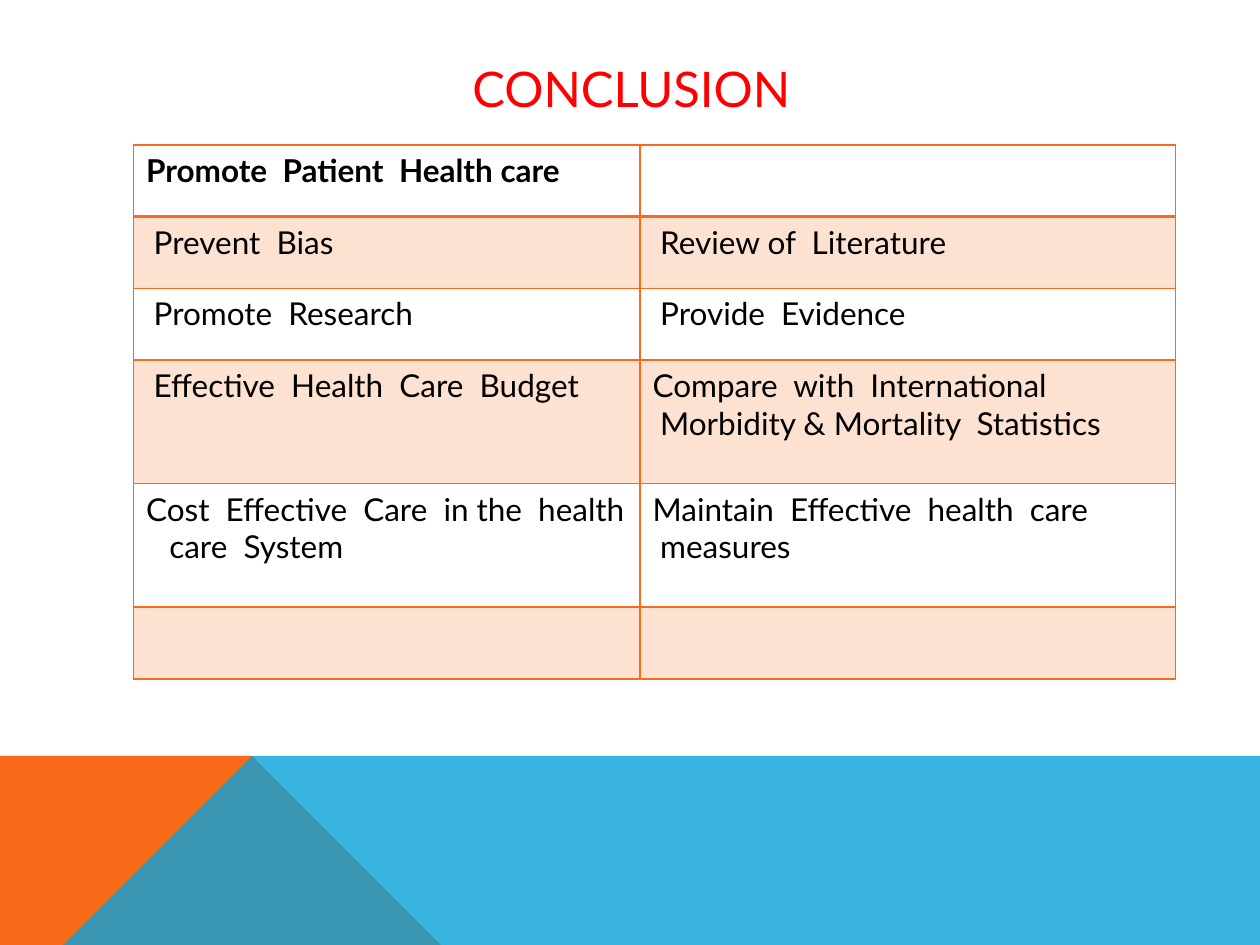
from lxml import etree
from pptx import Presentation
from pptx.dml.color import RGBColor
from pptx.enum.text import MSO_ANCHOR, PP_ALIGN
from pptx.oxml.ns import qn
from pptx.util import Inches, Pt

MIDDLE = MSO_ANCHOR.MIDDLE
CENTER, LEFT = PP_ALIGN.CENTER, PP_ALIGN.LEFT

ORANGE, BLUE, RED, BLACK = "F96A1B", "08A1D9", "FF0000", "000000"
HEADING = "CONCLUSION"
HEADING_FORMAT = {"name": "Lato", "size": Pt(28), "bold": False}
CELL_FORMAT = {"name": "Lato", "size": Pt(18)}

# Each cell: wording, left margin, first-line indent
EMPTY = ("", 0, 0)
ROWS = [
    (0.57, ("Promote  Patient  Health care", 0, 0), EMPTY),
    (0.57, ("Prevent  Bias", 0.06, 0), ("Review of  Literature", 0.06, 0)),
    (0.57, ("Promote  Research", 0.06, 0), ("Provide  Evidence", 0.06, 0)),
    (0.98, ("Effective  Health  Care  Budget", 0.06, 0),
     ("Compare  with  International  Morbidity & Mortality  Statistics", 0.06, -0.06)),
    (0.98, ("Cost  Effective  Care  in the  health  care  System", 0.12, -0.12),
     ("Maintain  Effective  health  care  measures", 0.06, -0.06)),
    (0.57, EMPTY, EMPTY),
]
COLUMN_WIDTHS = [4.02, 4.25]
FOOTER_SHAPES = [
    ([(0, 7.5), (0, 5.52), (2.23, 5.52), (3.91, 7.5)], ORANGE, 100),
    ([(0, 7.5), (2.23, 5.52), (10, 5.52), (10, 7.5)], BLUE, 80),
]


def rgb(color):
    return RGBColor.from_string(color)


def apply_format(font, values, color):
    for attribute, value in values.items():
        setattr(font, attribute, value)
    font.color.rgb = rgb(color)


def paint(fill, properties, color, opacity):
    fill.solid()
    fill.fore_color.rgb = rgb(color)
    if opacity < 100:
        tint = properties.find(qn("a:solidFill")).find(qn("a:srgbClr"))
        etree.SubElement(tint, qn("a:alpha"), val=str(opacity * 1000))


def add_border(properties, side, points):
    edge = etree.SubElement(properties, qn(f"a:ln{side}"), w=str(Pt(points)))
    solid = etree.SubElement(edge, qn("a:solidFill"))
    etree.SubElement(solid, qn("a:srgbClr"), val=ORANGE)


def add_footer(slide):
    for points, color, opacity in FOOTER_SHAPES:
        builder = slide.shapes.build_freeform(*points[0], scale=Inches(1))
        builder.add_line_segments(points[1:], close=True)
        band = builder.convert_to_shape()
        band.shadow.inherit = False
        band.line.fill.background()
        paint(band.fill, band.element.spPr, color, opacity)


def set_heading(slide):
    heading = slide.shapes.title
    heading.left, heading.top = Inches(0.9), Inches(0.4)
    heading.width, heading.height = Inches(8.22), Inches(0.6)
    heading.text_frame.text = HEADING
    heading.text_frame.vertical_anchor = MIDDLE
    paragraph = heading.text_frame.paragraphs[0]
    paragraph.alignment = CENTER
    apply_format(paragraph.runs[0].font, HEADING_FORMAT, RED)


def fill_cell(cell, content, row):
    wording, margin, indent = content
    properties = cell._tc.get_or_add_tcPr()
    for side in "LRTB":
        at_header_rule = (row, side) in ((0, "B"), (1, "T"))
        add_border(properties, side, 2 if at_header_rule else 1)
    if row % 2:
        paint(cell.fill, properties, ORANGE, 20)
    else:
        cell.fill.background()
    paragraph = cell.text_frame.paragraphs[0]
    paragraph.alignment = LEFT
    apply_format(paragraph.font, CELL_FORMAT, BLACK)
    if wording:
        run = paragraph.add_run()
        run.text = wording
        apply_format(run.font, CELL_FORMAT | {"bold": row == 0}, BLACK)
        spacing = paragraph._p.get_or_add_pPr()
        spacing.set("marL", str(Inches(margin)))
        spacing.set("indent", str(Inches(indent)))


def add_conclusions(slide):
    height = sum(row[0] for row in ROWS)
    conclusions = slide.shapes.add_table(
        len(ROWS), len(COLUMN_WIDTHS), Inches(1.06), Inches(1.15),
        Inches(sum(COLUMN_WIDTHS)), Inches(height)).table
    for column, width in zip(conclusions.columns, COLUMN_WIDTHS):
        column.width = Inches(width)
    for row, (row_height, *contents) in enumerate(ROWS):
        conclusions.rows[row].height = Inches(row_height)
        for column, content in enumerate(contents):
            fill_cell(conclusions.cell(row, column), content, row)


def main():
    deck = Presentation()
    deck.slide_width, deck.slide_height = Inches(10), Inches(7.5)
    slide = deck.slides.add_slide(deck.slide_layouts[5])
    add_footer(slide)
    set_heading(slide)
    add_conclusions(slide)
    deck.save("out.pptx")


if __name__ == "__main__":
    main()
